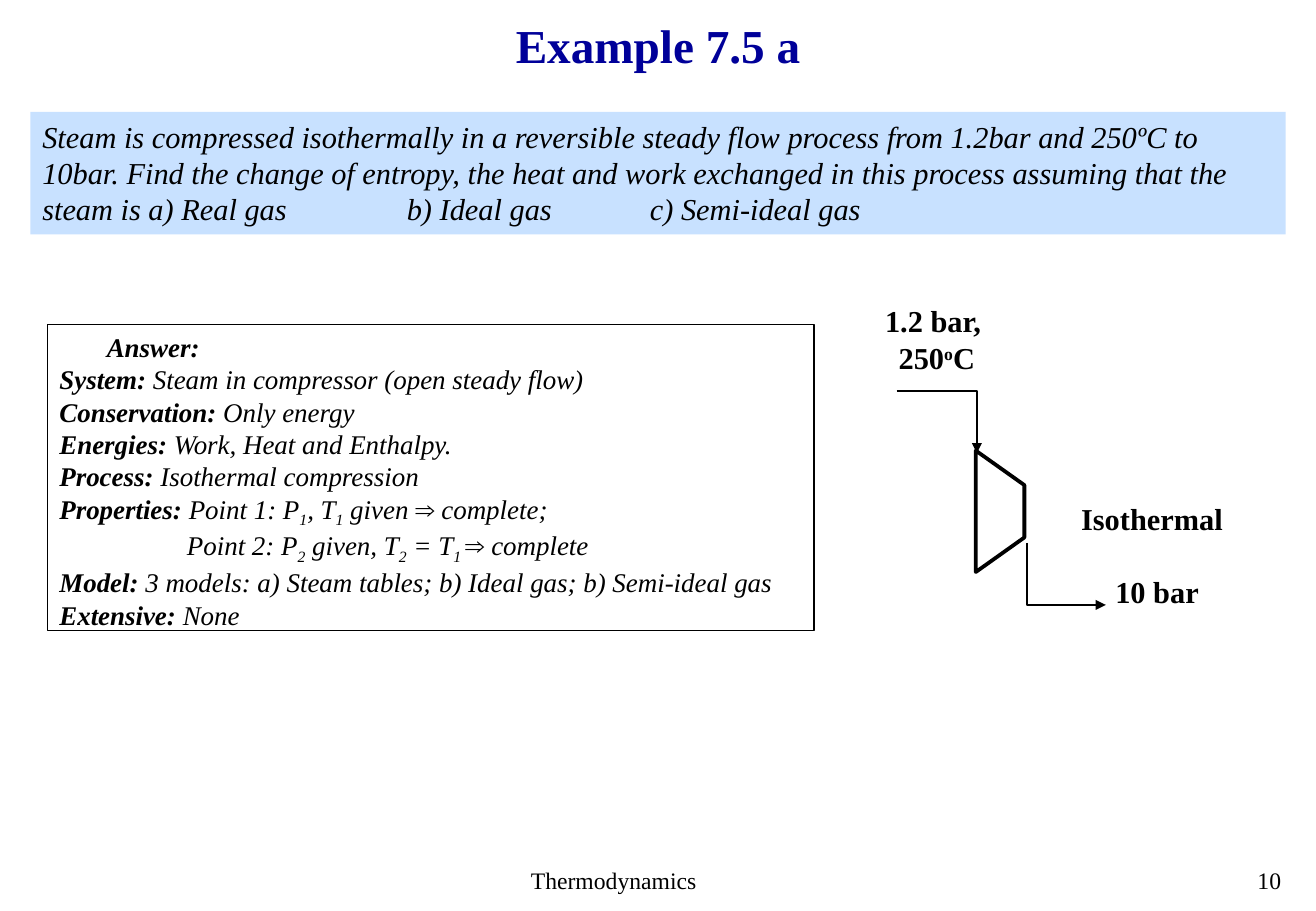
from pptx import Presentation
from pptx import util as u
from pptx.dml.color import RGBColor
from pptx.enum import shapes, text
from pptx.oxml.ns import qn
from lxml import etree

COLORS = {"ink": "000000", "title": "000099", "problem": "C8E1FF"}
FONT = "Times New Roman"
BODY = dict(size=u.Pt(18), bold=False, italic=False)
STRONG = dict(BODY, bold=True)
FOOTER = dict(BODY, size=u.Pt(14))
ANSWER = dict(BODY, size=u.Pt(16), italic=True)

prs = Presentation()
prs.slide_width, prs.slide_height = u.Inches(10.83), u.Inches(7.5)
slide = prs.slides.add_slide(prs.slide_layouts[5])


def write(paragraph, marked, style, color="ink"):
    """Add runs; * toggles bold, _ toggles subscript and ^ superscript."""
    bold, baseline, piece = style["bold"], 0, ""
    for sign in marked + "\0":
        if sign not in "*_^\0":
            piece += sign
            continue
        if piece:
            run = paragraph.add_run()
            run.text, piece = piece, ""
            for key, value in dict(style, bold=bold, name=FONT).items():
                setattr(run.font, key, value)
            run.font.color.rgb = RGBColor.from_string(COLORS[color])
            if baseline:
                run.font._element.set("baseline", str(baseline))
        if sign == "*":
            bold = not bold
        elif sign in "_^":
            baseline = 0 if baseline else {"_": -25000, "^": 30000}[sign]


def label(box, lines, style, align="LEFT", wrap=True):
    left, top, width, height = map(u.Inches, box)
    frame = slide.shapes.add_textbox(left, top, width, height).text_frame
    frame.word_wrap = wrap
    for i, line in enumerate(lines):
        paragraph = frame.add_paragraph() if i else frame.paragraphs[0]
        paragraph.alignment = getattr(text.PP_ALIGN, align)
        write(paragraph, line, style)
    return frame


title = slide.shapes.title
title.left, title.top, title.width, title.height = map(u.Inches, (4.13, 0.14, 2.57, 0.52))
title.text_frame.word_wrap = False
title.text_frame.vertical_anchor = text.MSO_ANCHOR.MIDDLE
heading = title.text_frame.paragraphs[0]
heading.alignment, heading.line_spacing = text.PP_ALIGN.CENTER, 0.9
write(heading, "Example 7.5 a", dict(STRONG, size=u.Pt(28)), "title")

label((4.27, 7.08, 1.58, 0.34), ["Thermodynamics"], FOOTER, wrap=False)
label((10.25, 7.08, 0.43, 0.33), ["10"], FOOTER, wrap=False)

# Problem statement, with tab stops between the three cases
problem = label((0.25, 0.92, 10.33, 1.01), [
    "Steam is compressed isothermally in a reversible steady flow process from "
    "1.2bar and 250ºC to 10bar. Find the change of entropy, the heat and work "
    "exchanged in this process assuming that the steam is a) Real gas\t"
    "b) Ideal gas\tc) Semi-ideal gas"], dict(BODY, italic=True))
tabs = etree.SubElement(problem.paragraphs[0]._p.get_or_add_pPr(), qn("a:tabLst"))
for stop in (3, 5):
    etree.SubElement(tabs, qn("a:tab"), pos=str(u.Inches(stop)), algn="l")
panel = slide.shapes[-1]
panel.fill.solid()
panel.fill.fore_color.rgb = RGBColor.from_string(COLORS["problem"])

answer = label((0.39, 2.67, 6.31, 2.52), [
    "*Answer:*",
    "*System: *Steam in compressor (open steady flow)",
    "*Conservation: *Only energy",
    "*Energies: *Work, Heat and Enthalpy.",
    "*Process: *Isothermal compression",
    "*Properties: *Point 1: P_1_, T_1_ given ⇒ complete;",
    "Point 2: P_2_ given, T_2_ = T_1 _⇒ complete",
    "*Model: *3 models: a) Steam tables; b) Ideal gas; b) Semi-ideal gas",
    "*Extensive: *None"], ANSWER)
for row, indent in ((0, 0.39), (6, 1.05)):
    answer.paragraphs[row]._p.get_or_add_pPr().set("marL", str(u.Inches(indent)))
frame_line = slide.shapes[-1].line
frame_line.width = u.Pt(0.75)
frame_line.color.rgb = RGBColor.from_string(COLORS["ink"])

# Compressor with its inlet and outlet pipes
compressor = slide.shapes.add_shape(
    shapes.MSO_SHAPE.TRAPEZOID, *map(u.Inches, (7.73, 4.01, 1, 0.4)))
compressor.rotation, compressor.adjustments[0] = 90, 0.711
pipes = []
for points in ([(7.38, 3.22), (8.04, 3.22), (8.04, 3.73)],
               [(8.45, 4.47), (8.45, 4.98), (9.1, 4.98)]):
    start, *rest = [(u.Inches(x), u.Inches(y)) for x, y in points]
    builder = slide.shapes.build_freeform(*start)
    builder.add_line_segments(rest, close=False)
    pipes.append(builder.convert_to_shape())
for part, width in zip([compressor, *pipes], (2.25, 1.5, 1.5)):
    part.shadow.inherit = False
    part.fill.background()
    part.line.width = u.Pt(width)
    part.line.color.rgb = RGBColor.from_string(COLORS["ink"])
for pipe in pipes:
    etree.SubElement(pipe.line._get_or_add_ln(), qn("a:tailEnd"), type="triangle")

label((7.03, 2.44, 1.36, 0.71), ["1.2 bar, ", "250^o^C"], STRONG, "CENTER")
label((9.08, 4.67, 1.92, 0.4), ["10 bar"], STRONG)
label((8.52, 4.07, 1.92, 0.4), ["Isothermal"], STRONG, "CENTER")

prs.save("out.pptx")
